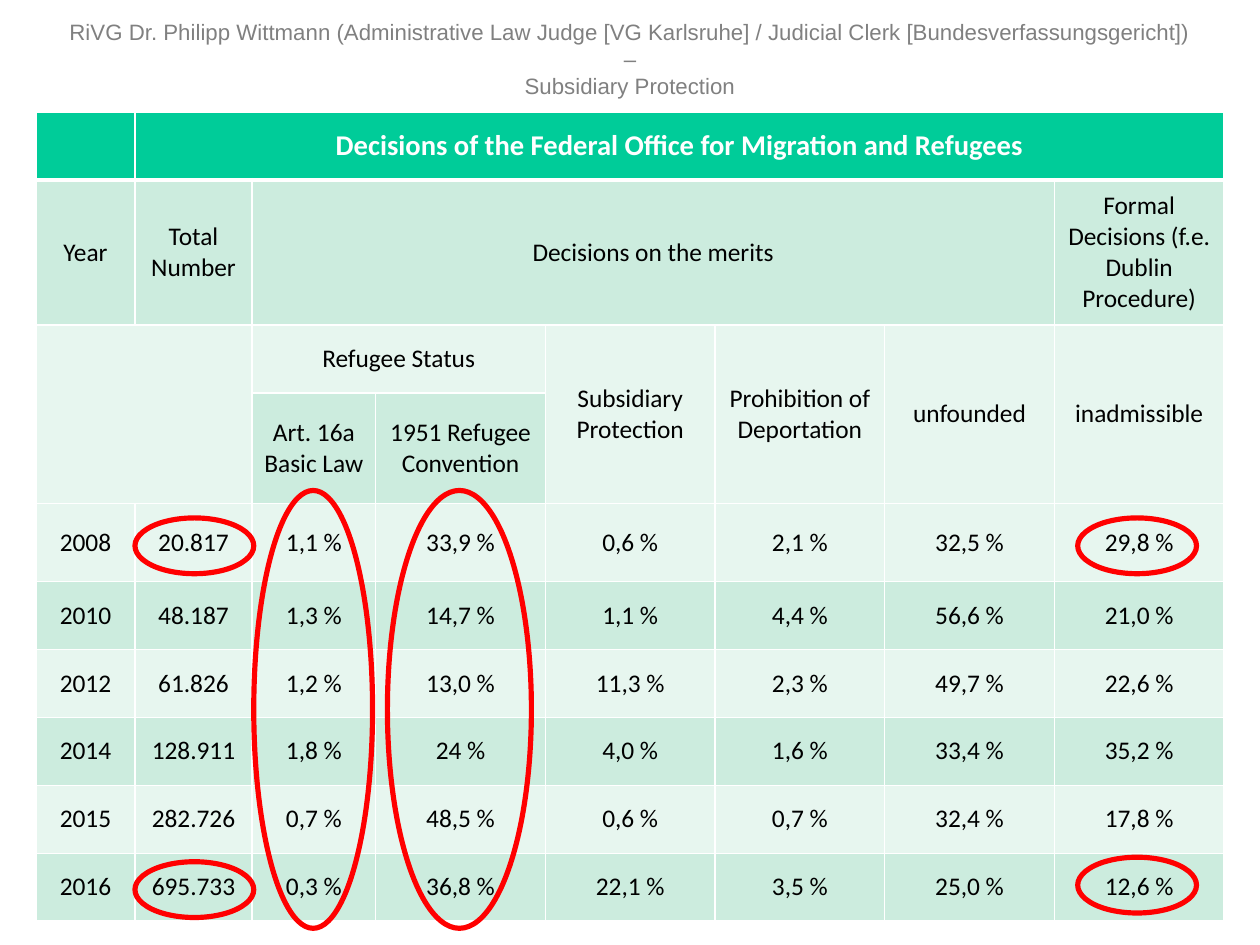
import lxml.etree
import pptx
import pptx.dml.color
import pptx.enum.shapes
import pptx.enum.text
import pptx.oxml.ns
import pptx.util

Cm = pptx.util.Cm
Pt = pptx.util.Pt
CENTER = pptx.enum.text.PP_ALIGN.CENTER
MIDDLE = pptx.enum.text.MSO_ANCHOR.MIDDLE

COLORS = {
    "header": "00CC99",
    "odd": "CCECDE",
    "even": "E7F6EF",
    "white": "FFFFFF",
    "black": "000000",
    "gray": "808080",
    "red": "FF0000",
}
TITLE_FONT = {"name": "Arial", "size": Pt(14)}
HEADER_FONT = {"name": "Calibri", "size": Pt(18), "bold": True}
BODY_FONT = {"name": "Calibri", "size": Pt(16), "bold": False}

TITLE = [
    "RiVG Dr. Philipp Wittmann (Administrative Law Judge [VG Karlsruhe] / "
    "Judicial Clerk [Bundesverfassungsgericht]) –",
    "Subsidiary Protection",
]
COLUMN_WIDTHS = [2.2, 2.6, 2.75] + [3.77] * 5
ROW_HEIGHTS = [1.51, 3.22, 1.51, 2.46, 1.73] + [1.51] * 5
MERGES = [
    (0, 1, 0, 7),
    (1, 2, 1, 6),
    (2, 0, 3, 1),
    (2, 2, 2, 3),
    (2, 4, 3, 4),
    (2, 5, 3, 5),
    (2, 6, 3, 6),
    (2, 7, 3, 7),
]
ROWS = [
    ["", "Decisions of the Federal Office for Migration and Refugees"] + [""] * 6,
    ["Year", "Total Number", "Decisions on the merits", "", "", "", "",
     "Formal Decisions (f.e. Dublin Procedure)"],
    ["", "", "Refugee Status", "", "Subsidiary Protection",
     "Prohibition of Deportation", "unfounded", "inadmissible"],
    ["", "", "Art. 16a Basic Law", "1951 Refugee Convention", "", "", "", ""],
    ["2008", "20.817", "1,1 %", "33,9 %", "0,6 %", "2,1 %", "32,5 %", "29,8 %"],
    ["2010", "48.187", "1,3 %", "14,7 %", "1,1 %", "4,4 %", "56,6 %", "21,0 %"],
    ["2012", "61.826", "1,2 %", "13,0 %", "11,3 %", "2,3 %", "49,7 %", "22,6 %"],
    ["2014", "128.911", "1,8 %", "24 %", "4,0 %", "1,6 %", "33,4 %", "35,2 %"],
    ["2015", "282.726", "0,7 %", "48,5 %", "0,6 %", "0,7 %", "32,4 %", "17,8 %"],
    ["2016", "695.733", "0,3 %", "36,8 %", "22,1 %", "3,5 %", "25,0 %", "12,6 %"],
]
HIGHLIGHTS = [
    (3, 11.51, 2.64, 1.24),
    (3, 19.15, 2.64, 1.24),
    (5.64, 10.9, 2.64, 9.73),
    (23.95, 11.51, 2.64, 1.24),
    (23.95, 19.05, 2.64, 1.24),
    (8.61, 10.9, 3.2, 9.73),
]


def rgb(name):
    return pptx.dml.color.RGBColor.from_string(COLORS[name])


def set_attributes(target, values):
    for name, value in values.items():
        setattr(target, name, value)


def write_paragraph(p, text, font, color):
    p.alignment = CENTER
    r = p.add_run()
    r.text = text
    set_attributes(r.font, font)
    r.font.color.rgb = rgb(color)


def add_title(s):
    tf = s.shapes.add_textbox(Cm(1.4), Cm(0.84), Cm(25.2), Cm(1.52)).text_frame
    set_attributes(tf, {
        "word_wrap": True,
        "vertical_anchor": MIDDLE,
        "margin_left": 0,
        "margin_top": 0,
        "margin_right": 0,
        "margin_bottom": Cm(0.6),
    })
    for i, text in enumerate(TITLE):
        p = tf.add_paragraph() if i else tf.paragraphs[0]
        write_paragraph(p, text, TITLE_FONT, "gray")


def set_borders(cell, widths):
    qn = pptx.oxml.ns.qn
    tc_pr = cell._tc.get_or_add_tcPr()
    for side, width in widths.items():
        ln = lxml.etree.SubElement(tc_pr, qn(f"a:ln{side}"), w=str(Pt(width)))
        fill = lxml.etree.SubElement(ln, qn("a:solidFill"))
        lxml.etree.SubElement(fill, qn("a:srgbClr"), val=COLORS["white"])


def fill_cell(cell, row, text):
    set_borders(cell, {"L": 1, "R": 1, "T": 3 if row == 1 else 1, "B": 1 if row else 3})
    cell.fill.solid()
    cell.fill.fore_color.rgb = rgb(("odd" if row % 2 else "even") if row else "header")
    cell.vertical_anchor = MIDDLE
    if text:
        font, color = (BODY_FONT, "black") if row else (HEADER_FONT, "white")
        write_paragraph(cell.text_frame.paragraphs[0], text, font, color)


def add_decisions_table(s):
    table = s.shapes.add_table(
        len(ROWS), len(COLUMN_WIDTHS), Cm(0.8), Cm(2.49),
        Cm(sum(COLUMN_WIDTHS)), Cm(sum(ROW_HEIGHTS)),
    ).table
    for column, width in zip(table.columns, COLUMN_WIDTHS):
        column.width = Cm(width)
    for row, height in zip(table.rows, ROW_HEIGHTS):
        row.height = Cm(height)
    for top, left, bottom, right in MERGES:
        table.cell(top, left).merge(table.cell(bottom, right))
    for i, texts in enumerate(ROWS):
        for j, text in enumerate(texts):
            fill_cell(table.cell(i, j), i, text)


def add_highlight(s, box):
    oval = pptx.enum.shapes.MSO_SHAPE.OVAL
    sp = s.shapes.add_shape(oval, *(Cm(length) for length in box))
    sp.shadow.inherit = False
    sp.fill.background()
    sp.line.color.rgb = rgb("red")
    sp.line.width = Pt(3.25)


def main():
    prs = pptx.Presentation()
    set_attributes(prs, {"slide_width": Cm(28), "slide_height": Cm(21)})
    s = prs.slides.add_slide(prs.slide_layouts[6])
    add_title(s)
    add_decisions_table(s)
    for box in HIGHLIGHTS:
        add_highlight(s, box)
    prs.save("out.pptx")


if __name__ == "__main__":
    main()
